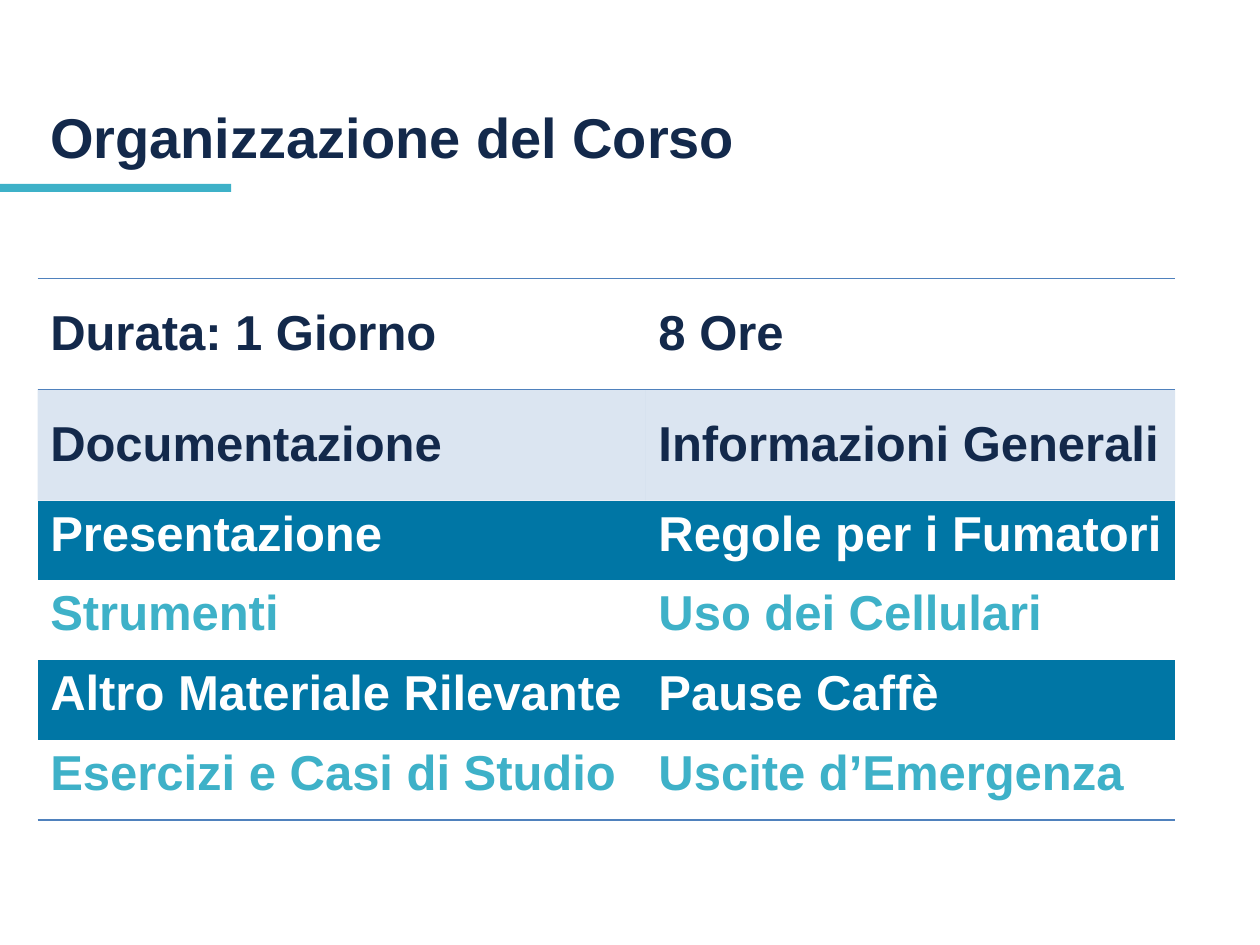
from dataclasses import dataclass

from lxml.etree import SubElement
from pptx import Presentation
from pptx.dml.color import RGBColor
from pptx.enum.shapes import MSO_SHAPE as Shape
from pptx.enum.text import MSO_ANCHOR as Anchor
from pptx.oxml.ns import qn
from pptx.util import Cm, Pt

NAVY, TEAL, BLUE, WHITE, RULE = "13294B", "3EB1C8", "0076A5", "FFFFFF", "4F81BD"
NO_STYLE = "{2D5ABB26-0587-4C30-8999-92F81FD0307C}"
LEFT = Cm(0.76)
COLUMN_WIDTHS = Cm(12.26), Cm(10.67)


@dataclass(frozen=True)
class RowStyle:
    height: float
    color: str
    fill: str | None = None
    opacity: int = 100
    anchor: Anchor = Anchor.TOP


@dataclass(frozen=True)
class CourseRow:
    left: str
    right: str
    style: RowStyle
    rules: tuple[str, ...] = ()


DURATION = RowStyle(2.24, NAVY, anchor=Anchor.MIDDLE)
HEADING = RowStyle(2.24, NAVY, RULE, 20, Anchor.MIDDLE)
DARK = RowStyle(1.61, WHITE, BLUE)
LIGHT = RowStyle(1.61, TEAL, WHITE)

COURSE_ROWS = [
    CourseRow("Durata: 1 Giorno", "8 Ore", DURATION, ("lnT", "lnB")),
    CourseRow("Documentazione", "Informazioni Generali", HEADING),
    CourseRow("Presentazione", "Regole per i Fumatori", DARK),
    CourseRow("Strumenti", "Uso dei Cellulari", LIGHT),
    CourseRow("Altro Materiale Rilevante", "Pause Caffè", DARK),
    CourseRow("Esercizi e Casi di Studio", "Uscite d’Emergenza", LIGHT, ("lnB",)),
]


def paint(target, color: str) -> None:
    target.solid()
    target.fore_color.rgb = RGBColor.from_string(color)


def write(frame, text: str, size: int, color: str) -> None:
    frame.text = text
    font = frame.paragraphs[0].runs[0].font
    font.name, font.size, font.bold = "Arial", Pt(size), True
    paint(font.fill, color)


def add_rule(cell, side: str) -> None:
    line = SubElement(cell._tc.get_or_add_tcPr(), qn(f"a:{side}"), w=str(Pt(1)))
    fill = SubElement(line, qn("a:solidFill"))
    SubElement(fill, qn("a:srgbClr"), val=RULE)


def fill_cell(cell, style: RowStyle) -> None:
    if style.fill is None:
        cell.fill.background()
        return
    paint(cell.fill, style.fill)
    if style.opacity < 100:
        color = cell._tc.tcPr.find(f".//{qn('a:solidFill')}/{qn('a:srgbClr')}")
        SubElement(color, qn("a:alpha"), val=str(style.opacity * 1000))


def add_title(page, text: str) -> None:
    bar = page.shapes.add_shape(Shape.RECTANGLE, 0, Cm(3.71), Cm(4.66), Cm(0.16))
    bar.shadow.inherit = False
    paint(bar.fill, TEAL)
    bar.line.fill.background()
    box = page.shapes.add_textbox(LEFT, Cm(0.81), Cm(20.62), Cm(2.74))
    box.text_frame.word_wrap = True
    box.text_frame.vertical_anchor = Anchor.BOTTOM
    write(box.text_frame, text, 32, NAVY)


def add_course_table(page, rows: list[CourseRow]) -> None:
    height = Cm(sum(row.style.height for row in rows))
    frame = page.shapes.add_table(
        len(rows), len(COLUMN_WIDTHS), LEFT, Cm(5.61), sum(COLUMN_WIDTHS), height
    )
    table = frame.table
    table.first_row = table.horz_banding = False
    table._tbl.tblPr.find(qn("a:tableStyleId")).text = NO_STYLE
    for column, width in zip(table.columns, COLUMN_WIDTHS):
        column.width = width
    for table_row, row in zip(table.rows, rows):
        table_row.height = Cm(row.style.height)
        for cell, text in zip(table_row.cells, (row.left, row.right)):
            write(cell.text_frame, text, 28, row.style.color)
            cell.vertical_anchor = row.style.anchor
            for side in row.rules:
                add_rule(cell, side)
            fill_cell(cell, row.style)


def main() -> None:
    deck = Presentation()
    deck.slide_width, deck.slide_height = Cm(25.4), Cm(19.05)
    page = deck.slides.add_slide(deck.slide_layouts[6])
    add_title(page, "Organizzazione del Corso")
    add_course_table(page, COURSE_ROWS)
    deck.save("out.pptx")


if __name__ == "__main__":
    main()
